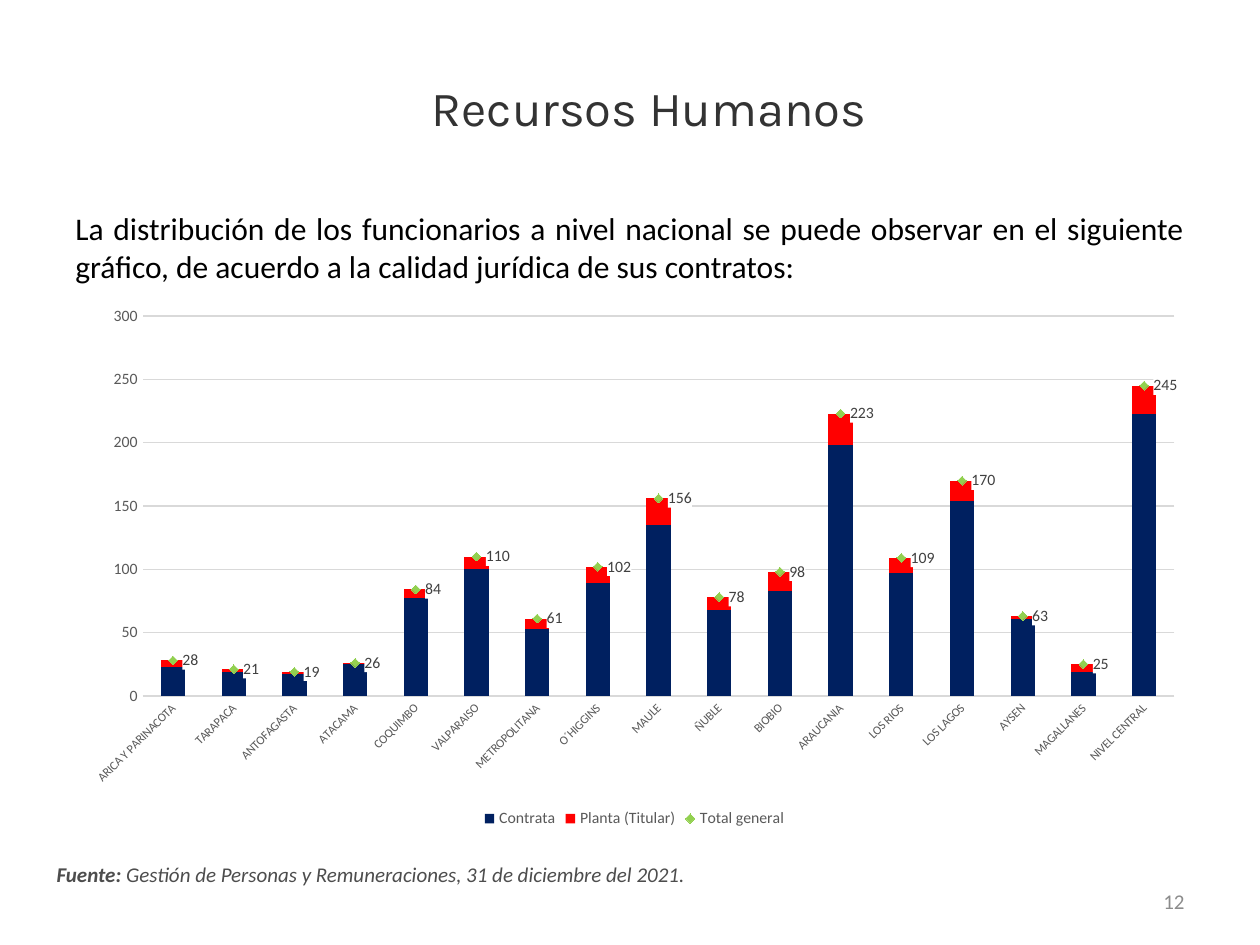
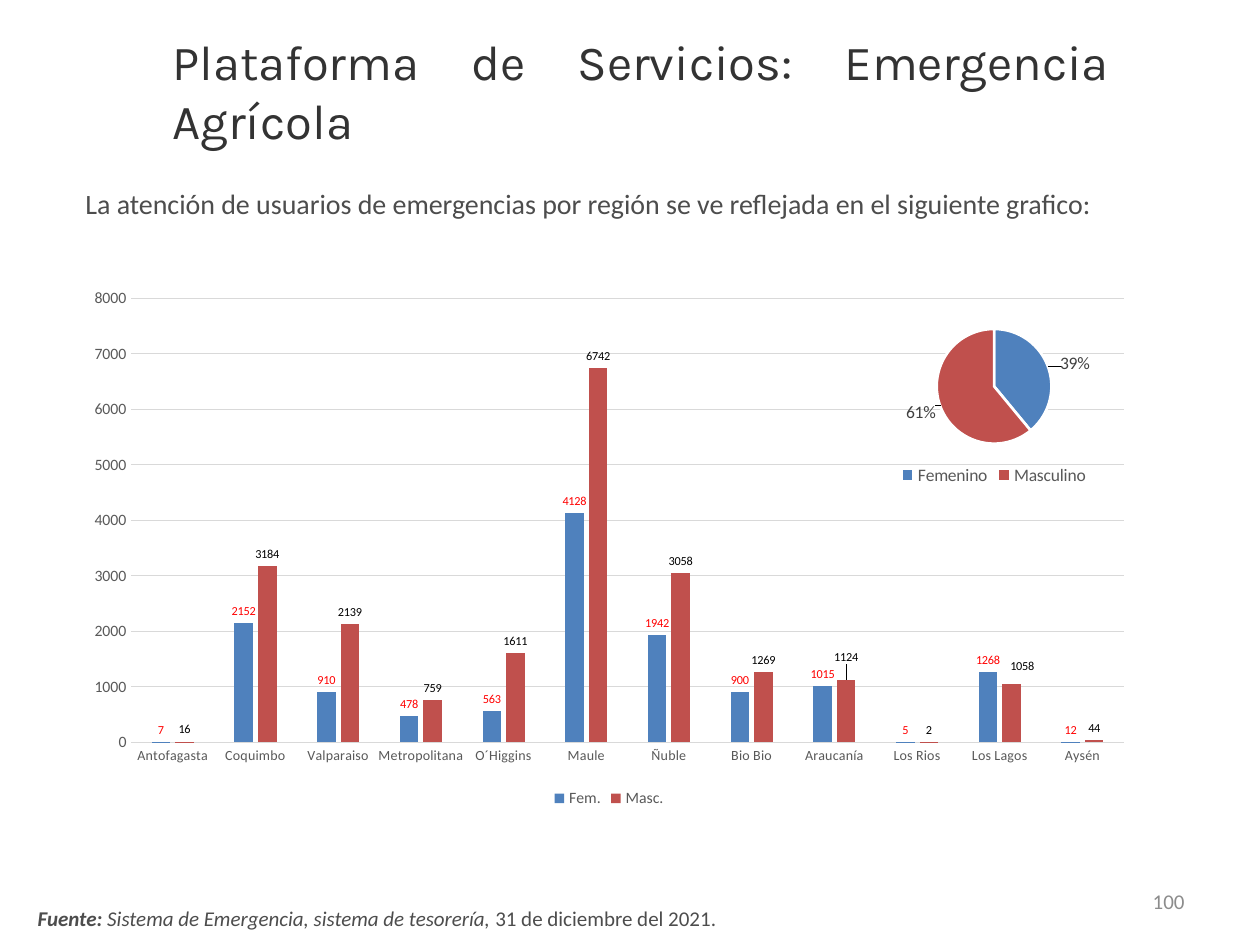
from pptx import Presentation
from pptx.chart.data import CategoryChartData
from pptx.dml.color import RGBColor
from pptx.enum.chart import (XL_CHART_TYPE, XL_LABEL_POSITION, XL_LEGEND_POSITION,
                             XL_MARKER_STYLE, XL_TICK_MARK)
from pptx.enum.text import MSO_ANCHOR, PP_ALIGN
from pptx.oxml import parse_xml
from pptx.oxml.ns import nsdecls, qn
from pptx.util import Inches, Pt

STACKED = XL_CHART_TYPE.COLUMN_STACKED
CLUSTERED = XL_CHART_TYPE.COLUMN_CLUSTERED
PIE = XL_CHART_TYPE.PIE
OUTSIDE = XL_LABEL_POSITION.OUTSIDE_END
RIGHT_OF = XL_LABEL_POSITION.RIGHT
LEGEND_BOTTOM = XL_LEGEND_POSITION.BOTTOM
DIAMOND = XL_MARKER_STYLE.DIAMOND
NO_TICK = XL_TICK_MARK.NONE
TOP, MIDDLE = MSO_ANCHOR.TOP, MSO_ANCHOR.MIDDLE
LEFT, CENTER, RIGHT, JUSTIFY = PP_ALIGN.LEFT, PP_ALIGN.CENTER, PP_ALIGN.RIGHT, PP_ALIGN.JUSTIFY

COLORS = {
    "title": "333333", "text": "4D4D4D", "black": "000000", "white": "FFFFFF",
    "number": "8C8C8C", "axis": "595959", "label": "404040", "grid": "D9D9D9",
    "contrata": "002060", "red": "FF0000", "marker": "92D050",
    "fem": "4F81BD", "masc": "C0504D",
}
BODY_FONT, TITLE_FONT = "Calibri", "Karla"

REGIONS = ["ARICA Y PARINACOTA", "TARAPACA", "ANTOFAGASTA", "ATACAMA", "COQUIMBO",
           "VALPARAISO", "METROPOLITANA", "O´HIGGINS", "MAULE", "ÑUBLE", "BIOBIO",
           "ARAUCANIA", "LOS RIOS", "LOS LAGOS", "AYSEN", "MAGALLANES", "NIVEL CENTRAL"]
CONTRATA = [23, 19, 17, 25, 77, 100, 53, 89, 135, 68, 83, 198, 97, 154, 61, 19, 223]
PLANTA = [5, 2, 2, 1, 7, 10, 8, 13, 21, 10, 15, 25, 12, 16, 2, 6, 22]
EMERGENCY_REGIONS = ["Antofagasta", "Coquimbo", "Valparaiso", "Metropolitana", "O´Higgins",
                     "Maule", "Ñuble", "Bio Bio", "Araucanía", "Los Rios", "Los Lagos", "Aysén"]
FEM = [7, 2152, 910, 478, 563, 4128, 1942, 900, 1015, 5, 1268, 12]
MASC = [16, 3184, 2139, 759, 1611, 6742, 3058, 1269, 1124, 2, 1058, 44]


def rgb(name):
    return RGBColor.from_string(COLORS[name])


def set_font(font, size, color, name=BODY_FONT, bold=None, italic=None):
    font.size = Pt(size)
    font.name = name
    font.color.rgb = rgb(color)
    font.bold = bold
    font.italic = italic


def add_text(s, runs, box, size=12, color="text", font=BODY_FONT, align=LEFT,
             anchor=TOP, inset=(0.1, 0.05)):
    tf = s.shapes.add_textbox(*map(Inches, box)).text_frame
    tf.word_wrap = True
    tf.vertical_anchor = anchor
    tf.margin_left, tf.margin_top = map(Inches, inset)
    p = tf.paragraphs[0]
    p.alignment = align
    if isinstance(runs, str):
        runs = [(runs, {})]
    for text, style in runs:
        r = p.add_run()
        r.text = text
        set_font(r.font, size, color, font, **style)


def add_title(s, text, box, **options):
    add_text(s, text, box, size=28, color="title", font=TITLE_FONT, anchor=MIDDLE, **options)


def add_source(s, runs, box):
    add_text(s, [("Fuente: ", {"bold": True, "italic": True}), *runs], box)


def add_page_number(s, number):
    add_text(s, str(number), (7.17, 6.95, 2.33, 0.4), color="number", align=RIGHT, anchor=MIDDLE)


def add_chart(s, kind, box, categories, series, legend_size=9):
    data = CategoryChartData()
    data.categories = categories
    for name, values in series:
        data.add_series(name, values)
    chart = s.shapes.add_chart(kind, *map(Inches, box), data).chart
    chart.has_title = False
    set_font(chart.font, 10, "black")
    chart.has_legend = True
    chart.legend.position = LEGEND_BOTTOM
    chart.legend.include_in_layout = False
    set_font(chart.legend.font, legend_size, "axis")
    chart._chartSpace.find(qn("c:chart")).addnext(parse_xml(
        f'<c:spPr {nsdecls("c", "a")}><a:noFill/><a:ln><a:noFill/></a:ln></c:spPr>'))
    return chart


def style_columns(chart, colors, gap, overlap, category_size, top, step):
    plot = chart.plots[0]
    plot.vary_by_categories = False
    plot.gap_width, plot.overlap = gap, overlap
    for ser, color in zip(plot.series, colors):
        ser.format.fill.solid()
        ser.format.fill.fore_color.rgb = rgb(color)
        ser.invert_if_negative = False
    cat, val = chart.category_axis, chart.value_axis
    for axis, size in ((cat, category_size), (val, 9)):
        axis.major_tick_mark = axis.minor_tick_mark = NO_TICK
        set_font(axis.tick_labels.font, size, "axis")
    val.minimum_scale, val.maximum_scale, val.major_unit = 0, top, step
    val.format.line.fill.background()
    for line in (cat.format.line, val.major_gridlines.format.line):
        line.color.rgb = rgb("grid")
        line.width = Pt(0.75)


def label_series(ser, size, color, position, percent=False):
    labels = ser.data_labels
    labels.show_value = not percent
    labels.show_percentage = percent
    labels.position = position
    set_font(labels.font, size, color)


def move_label(ser, index, x, y, size, color, percent=False):
    label = ser.points[index].data_label
    label.position = OUTSIDE
    set_font(label.font, size, color)
    d_lbl = ser._element.xpath(f"c:dLbls/c:dLbl[c:idx/@val='{index}']")[0]
    d_lbl.find(qn("c:showVal")).set("val", str(int(not percent)))
    d_lbl.find(qn("c:showPercent")).set("val", str(int(percent)))
    d_lbl.find(qn("c:idx")).addnext(parse_xml(
        f'<c:layout {nsdecls("c")}><c:manualLayout><c:x val="{x}"/><c:y val="{y}"/>'
        '</c:manualLayout></c:layout>'))


def turn_last_series_into_markers(chart):
    bars = chart._chartSpace.xpath(".//c:barChart")[0]
    ser = bars.findall(qn("c:ser"))[-1]
    for invert in ser.findall(qn("c:invertIfNegative")):
        ser.remove(invert)
    line = parse_xml(f'<c:lineChart {nsdecls("c")}><c:grouping val="standard"/>'
                     '<c:varyColors val="0"/><c:marker val="1"/></c:lineChart>')
    line.insert(2, ser)
    for axis in bars.findall(qn("c:axId")):
        line.append(parse_xml(f'<c:axId {nsdecls("c")} val="{axis.get("val")}"/>'))
    bars.addnext(line)

    total = chart.plots[1].series[0]
    total.smooth = False
    total.format.line.fill.background()
    total.marker.style = DIAMOND
    total.marker.size = 5
    total.marker.format.fill.solid()
    total.marker.format.fill.fore_color.rgb = rgb("marker")
    total.marker.format.line.fill.background()
    label_series(total, 9, "label", RIGHT_OF)
    total._element.xpath("c:dLbls/c:txPr")[0].addprevious(parse_xml(
        f'<c:spPr {nsdecls("c", "a")}><a:solidFill><a:srgbClr val="{COLORS["white"]}"/>'
        '</a:solidFill></c:spPr>'))


def add_staff_chart(s):
    totals = [c + p for c, p in zip(CONTRATA, PLANTA)]
    chart = add_chart(s, STACKED, (0.57, 2.35, 8.93, 4.26), REGIONS,
                      [("Contrata", CONTRATA), ("Planta (Titular)", PLANTA),
                       ("Total general", totals)])
    turn_last_series_into_markers(chart)
    style_columns(chart, ["contrata", "red"], 150, 100, 7, 300, 50)
    body = chart.category_axis._element.find(qn("c:txPr")).find(qn("a:bodyPr"))
    body.set("rot", "-2700000")
    body.set("vert", "horz")


def add_emergency_chart(s):
    chart = add_chart(s, CLUSTERED, (0.58, 2.21, 8.51, 4.24), EMERGENCY_REGIONS,
                      [("Fem.", FEM), ("Masc.", MASC)])
    style_columns(chart, ["fem", "masc"], 219, -27, 8, 8000, 1000)
    fem, masc = chart.plots[0].series
    label_series(fem, 7, "red", OUTSIDE)
    label_series(masc, 7, "black", OUTSIDE)
    for index, x, y in ((8, 0, -0.02), (10, 0.01, -0.01)):
        move_label(masc, index, x, y, 7, "black")


def add_gender_pie(s):
    chart = add_chart(s, PIE, (6.88, 2.42, 2.02, 1.47), ["Femenino", "Masculino"],
                      [("Series 1", [39, 61])], legend_size=10)
    chart.plots[0].vary_by_categories = True
    ser = chart.plots[0].series[0]
    label_series(ser, 10, "label", OUTSIDE, percent=True)
    for index, (color, x, y) in enumerate((("fem", 0.02, 0.05), ("masc", 0.01, -0.03))):
        point = ser.points[index]
        point.format.fill.solid()
        point.format.fill.fore_color.rgb = rgb(color)
        point.format.line.color.rgb = rgb("white")
        point.format.line.width = Pt(1.5)
        move_label(ser, index, x, y, 10, "label", percent=True)
    area = chart._chartSpace.xpath(".//c:plotArea")[0]
    for layout in area.findall(qn("c:layout")):
        area.remove(layout)
    area.insert(0, parse_xml(
        f'<c:layout {nsdecls("c")}><c:manualLayout><c:layoutTarget val="inner"/>'
        '<c:xMode val="edge"/><c:yMode val="edge"/><c:x val="0"/><c:y val="0.13"/>'
        '<c:w val="1"/><c:h val="0.62"/></c:manualLayout></c:layout>'))


def build_staff_slide(s):
    add_title(s, "Recursos Humanos", (0.5, 0.27, 9, 1.04), align=CENTER, inset=(0.4, 0.16))
    add_text(s, "La distribución de los funcionarios a nivel nacional se puede observar en el "
                "siguiente gráfico, de acuerdo a la calidad jurídica de sus contratos:",
             (0.5, 1.61, 9, 5.09), size=18, color="black", align=JUSTIFY)
    add_source(s, [("Gestión de Personas y Remuneraciones, 31 de diciembre del 2021.",
                    {"italic": True})], (0.35, 6.79, 5.75, 0.3))
    add_page_number(s, 12)
    add_staff_chart(s)


def build_emergency_slide(s):
    add_text(s, "La atención de usuarios de emergencias por región se ve reflejada en el "
                "siguiente grafico:", (0.58, 1.43, 9, 5.1), size=16)
    add_source(s, [("Sistema de Emergencia, sistema de tesorería, ", {"italic": True}),
                   ("31 de diciembre del 2021.", {})], (0.2, 7.14, 7.01, 0.3))
    add_title(s, "Plataforma de Servicios: Emergencia Agrícola", (1.27, 0.09, 7.63, 1.25),
              align=JUSTIFY)
    add_page_number(s, 100)
    add_emergency_chart(s)
    add_gender_pie(s)


def main():
    prs = Presentation()
    prs.slide_width, prs.slide_height = Inches(10), Inches(7.5)
    for build in (build_staff_slide, build_emergency_slide):
        build(prs.slides.add_slide(prs.slide_layouts[6]))
    prs.save("out.pptx")


if __name__ == "__main__":
    main()
